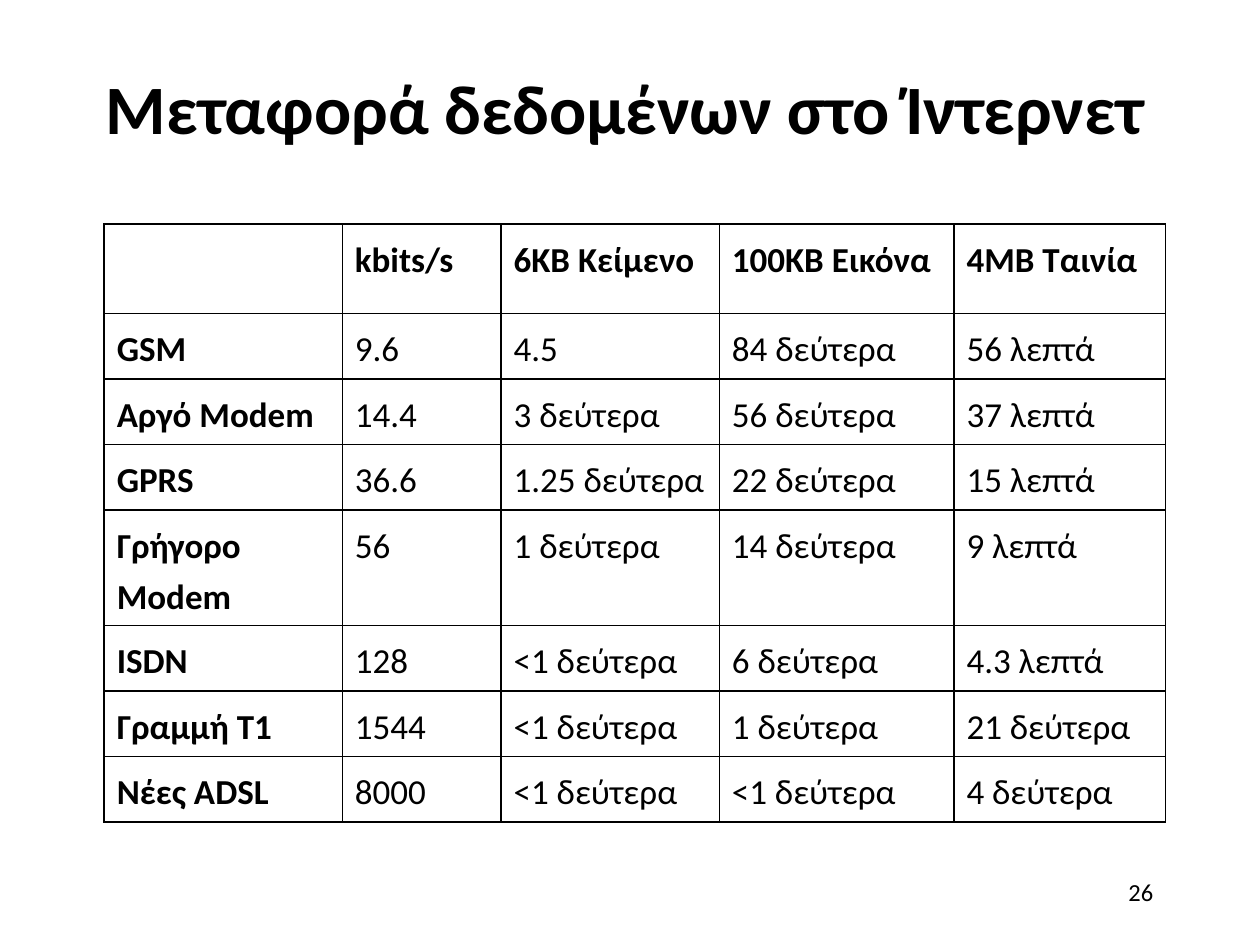
"""Build a slide with a table of data transfer times on the Internet."""
from lxml import etree
from pptx import Presentation
from pptx.dml.color import RGBColor
from pptx.enum.text import MSO_ANCHOR, PP_ALIGN
from pptx.oxml.ns import qn
from pptx.util import Cm, Pt

LEFT, CENTER, RIGHT = PP_ALIGN.LEFT, PP_ALIGN.CENTER, PP_ALIGN.RIGHT
MIDDLE = MSO_ANCHOR.MIDDLE
BLACK = RGBColor(0, 0, 0)
FONT = "Calibri"

TITLE = "Μεταφορά δεδομένων στο Ίντερνετ"
PAGE_NUMBER = "26"
ROWS = [
    ("", "kbits/s", "6KB Κείμενο", "100KB Εικόνα", "4MB Ταινία"),
    ("GSM", "9.6", "4.5", "84 δεύτερα", "56 λεπτά"),
    ("Αργό Modem", "14.4", "3 δεύτερα", "56 δεύτερα", "37 λεπτά"),
    ("GPRS", "36.6", "1.25 δεύτερα", "22 δεύτερα", "15 λεπτά"),
    ("Γρήγορο Modem", "56", "1 δεύτερα", "14 δεύτερα", "9 λεπτά"),
    ("ISDN", "128", "<1 δεύτερα", "6 δεύτερα", "4.3 λεπτά"),
    ("Γραμμή T1", "1544", "<1 δεύτερα", "1 δεύτερα", "21 δεύτερα"),
    ("Νέες ADSL", "8000", "<1 δεύτερα", "<1 δεύτερα", "4 δεύτερα"),
]
COLUMN_WIDTHS = [4.8, 3.2, 4.4, 4.73, 4.27]
HEADER_HEIGHT, ROW_HEIGHT, TALL_HEIGHT = 1.8, 1.32, 2.1
ROW_HEIGHTS = [HEADER_HEIGHT] + [ROW_HEIGHT] * 3 + [TALL_HEIGHT] + [ROW_HEIGHT] * 3


def write_text(frame, text, size, bold=False, align=LEFT, line_spacing=None, before=0):
    """Put one formatted paragraph into a text frame."""
    frame.word_wrap = True
    paragraph = frame.paragraphs[0]
    paragraph.alignment = align
    paragraph.space_before = Pt(before)
    if line_spacing:
        paragraph.line_spacing = line_spacing
    run = paragraph.add_run()
    run.text = text
    run.font.name = FONT
    run.font.size = Pt(size)
    run.font.bold = bold
    run.font.color.rgb = BLACK


def draw_borders(cell):
    """Give a cell a thin black line on each side."""
    properties = cell._tc.get_or_add_tcPr()
    for position, side in enumerate(("a:lnL", "a:lnR", "a:lnT", "a:lnB")):
        line = etree.Element(qn(side), w=str(Pt(1)))
        fill = etree.SubElement(line, qn("a:solidFill"))
        etree.SubElement(fill, qn("a:srgbClr"), val=str(BLACK))
        properties.insert(position, line)


def add_title(slide):
    """Place and fill the title."""
    title = slide.shapes.title
    title.left, title.top, title.width, title.height = Cm(1.7), Cm(0.56), Cm(21.8), Cm(3.18)
    title.text_frame.vertical_anchor = MIDDLE
    write_text(title.text_frame, TITLE, 39.6, bold=True, align=CENTER)


def add_transfer_table(slide):
    """Add the table of transfer times."""
    table = slide.shapes.add_table(
        len(ROWS), len(COLUMN_WIDTHS), Cm(2.1), Cm(4.52),
        Cm(sum(COLUMN_WIDTHS)), Cm(sum(ROW_HEIGHTS))).table
    table.first_row = table.horz_banding = False
    for column, width in zip(table.columns, COLUMN_WIDTHS):
        column.width = Cm(width)
    for row_index, (texts, height) in enumerate(zip(ROWS, ROW_HEIGHTS)):
        table.rows[row_index].height = Cm(height)
        for column_index, text in enumerate(texts):
            cell = table.cell(row_index, column_index)
            cell.fill.background()
            draw_borders(cell)
            if text:
                heading = row_index == 0 or column_index == 0
                write_text(cell.text_frame, text, 20, bold=heading,
                           line_spacing=1.2, before=4)


def add_page_number(slide):
    """Add the page number at the bottom right."""
    box = slide.shapes.add_textbox(Cm(18.2), Cm(17.35), Cm(5.3), Cm(1.27))
    box.text_frame.vertical_anchor = MIDDLE
    write_text(box.text_frame, PAGE_NUMBER, 14, align=RIGHT)


def main():
    """Build and save the presentation."""
    presentation = Presentation()
    presentation.slide_width, presentation.slide_height = Cm(25.4), Cm(19.05)
    slide = presentation.slides.add_slide(presentation.slide_layouts.get_by_name("Title Only"))
    add_title(slide)
    add_transfer_table(slide)
    add_page_number(slide)
    presentation.save("out.pptx")


if __name__ == "__main__":
    main()
